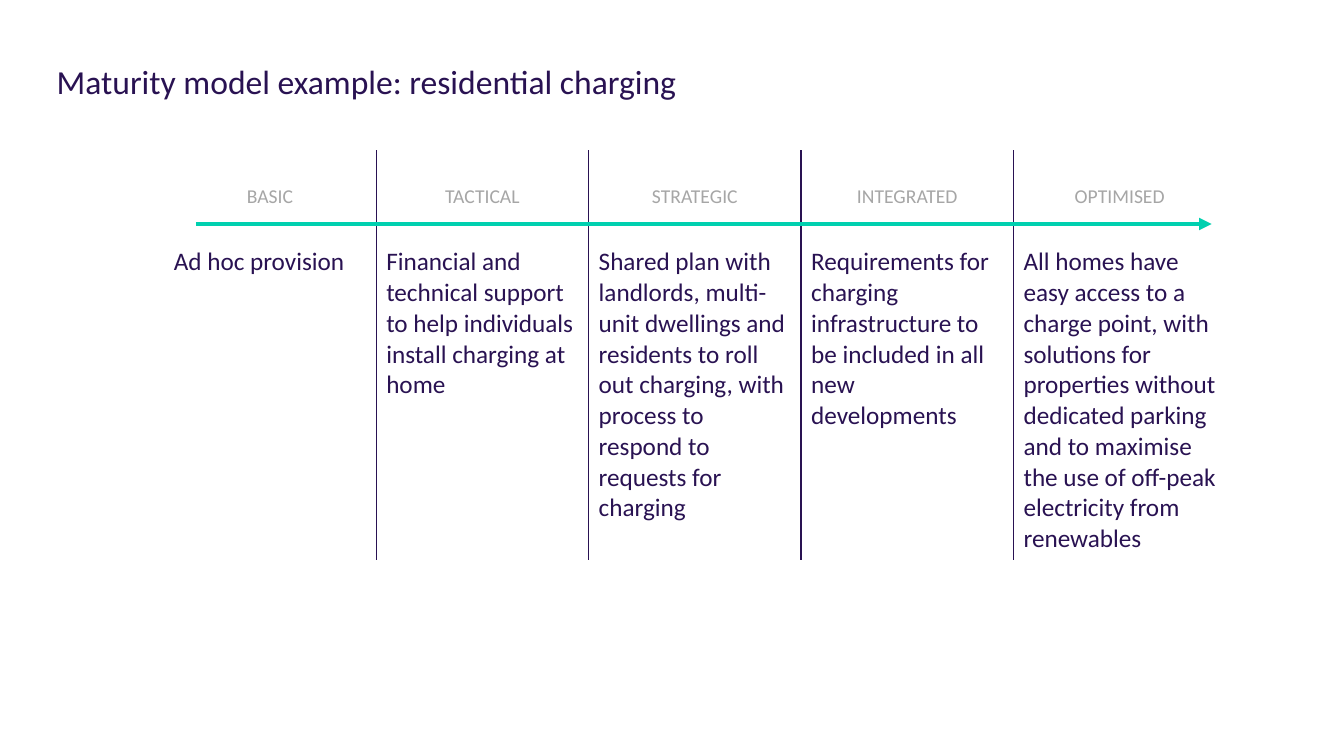
"""Build the residential charging maturity model slide."""
from dataclasses import dataclass

from lxml.etree import SubElement
from pptx import Presentation
from pptx.dml.color import RGBColor
from pptx.enum.shapes import MSO_CONNECTOR
from pptx.enum.text import PP_ALIGN
from pptx.oxml.ns import qn
from pptx.util import Pt


@dataclass(frozen=True)
class Theme:
    font: str = "Calibri"
    ink: str = "291252"
    label: str = "A6A6A6"
    arrow: str = "00D0AF"
    title_size: int = 24
    body_size: int = 18
    label_size: int = 14


theme = Theme()


def format_text(p, size, color):
    for r in p.runs:
        r.font.name = theme.font
        r.font.size = Pt(size)
        r.font.color.rgb = RGBColor.from_string(color)


def add_border(cell, side):
    ln = SubElement(cell._tc.get_or_add_tcPr(), qn(f"a:{side}"), w=str(Pt(1)))
    fill = SubElement(ln, qn("a:solidFill"))
    SubElement(fill, qn("a:srgbClr"), val=theme.ink)


stages = [
    ("BASIC", "Ad hoc provision"),
    ("TACTICAL", "Financial and technical support to help individuals "
     "install charging at home"),
    ("STRATEGIC", "Shared plan with landlords, multi-unit dwellings and "
     "residents to roll out charging, with process to respond to requests "
     "for charging"),
    ("INTEGRATED", "Requirements for charging infrastructure to be included "
     "in all new developments"),
    ("OPTIMISED", "All homes have easy access to a charge point, with "
     "solutions for properties without dedicated parking and to maximise "
     "the use of off-peak electricity from renewables"),
]
margin_width, stage_width = 117, 151.75
row_heights = (65.5, 227)

prs = Presentation()
prs.slide_width, prs.slide_height = Pt(960), Pt(540)
s = prs.slides.add_slide(prs.slide_layouts[6])

frame = s.shapes.add_table(
    2, len(stages) + 1, Pt(0), Pt(107.25),
    Pt(margin_width + stage_width * len(stages)), Pt(sum(row_heights)))
table = frame.table
table.first_row = table.horz_banding = False
style = table._tbl.tblPr.find(qn("a:tableStyleId"))
style.text = "{2D5ABB26-0587-4C30-8999-92F81FD0307C}"
for row, height in zip(table.rows, row_heights):
    row.height = Pt(height)
for i, column in enumerate(table.columns):
    column.width = Pt(stage_width if i else margin_width)

for col, stage in enumerate(stages, start=1):
    for row, text in enumerate(stage):
        cell = table.cell(row, col)
        cell.text = text
        p = cell.text_frame.paragraphs[0]
        if row == 0:
            cell.margin_left = cell.margin_right = cell.margin_bottom = Pt(0)
            cell.margin_top = Pt(25)
            p.alignment = PP_ALIGN.CENTER
            format_text(p, theme.label_size, theme.label)
        else:
            format_text(p, theme.body_size, theme.ink)
        if col > 1:
            add_border(cell, "lnL")
        if col < len(stages):
            add_border(cell, "lnR")
for row in table.rows:
    for cell in row.cells:
        cell.fill.background()

arrow = s.shapes.add_connector(
    MSO_CONNECTOR.STRAIGHT, Pt(140), Pt(160), Pt(865.5), Pt(160))
arrow.line.color.rgb = RGBColor.from_string(theme.arrow)
arrow.line.width = Pt(3)
SubElement(arrow.line._get_or_add_ln(), qn("a:tailEnd"), type="triangle")
SubElement(arrow._element.spPr, qn("a:effectLst"))

title = s.shapes.add_textbox(Pt(40.5), Pt(43.5), Pt(581), Pt(62.5))
tf = title.text_frame
tf.word_wrap = True
tf.margin_left = tf.margin_right = tf.margin_top = tf.margin_bottom = Pt(0)
tf.text = "Maturity model example: residential charging"
format_text(tf.paragraphs[0], theme.title_size, theme.ink)

prs.save("out.pptx")
